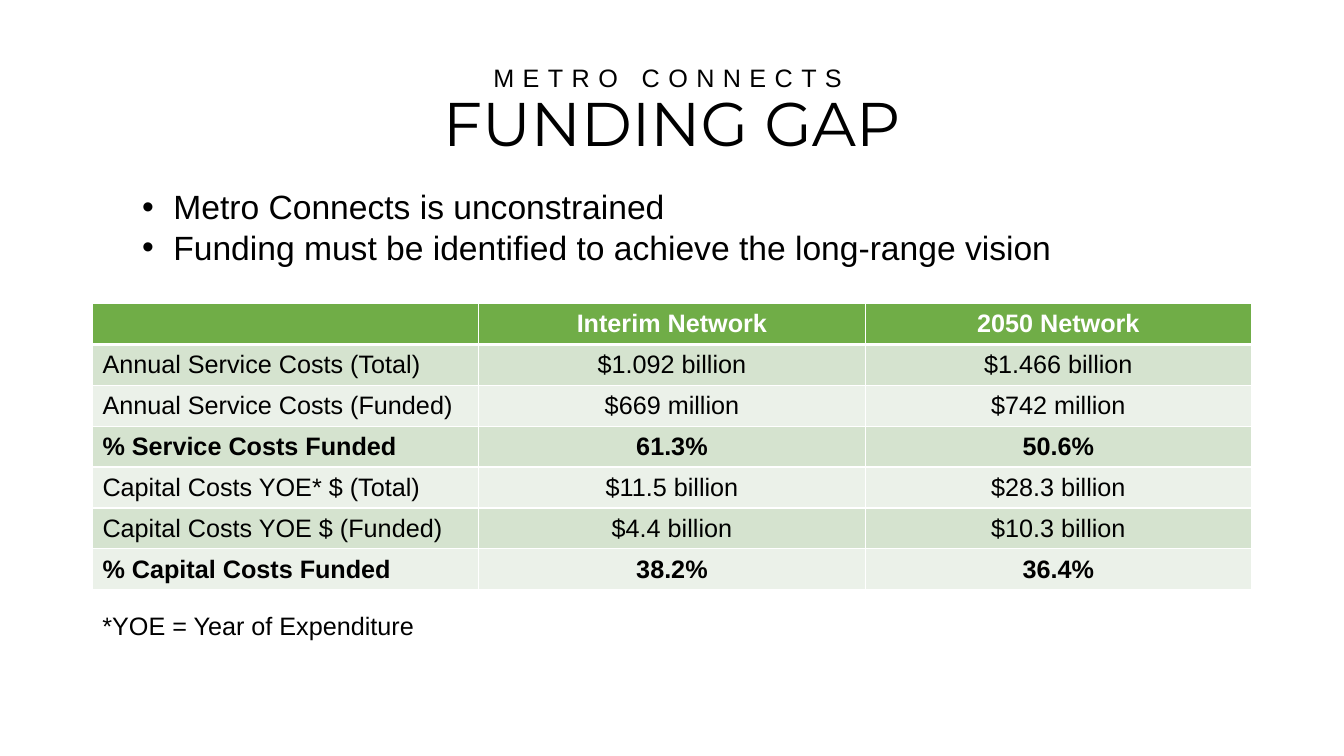
import pptx
import pptx.dml.color
import pptx.enum.text
import pptx.oxml
import pptx.oxml.ns
import pptx.util
from pptx.util import Cm

BLACK, WHITE, GREEN = "000000", "FFFFFF", "70AD47"
BANDS = ("D5E3CF", "EBF1E9")
CENTER = pptx.enum.text.PP_ALIGN.CENTER
MIDDLE = pptx.enum.text.MSO_ANCHOR.MIDDLE

COSTS = [
    ("", "Interim Network", "2050 Network"),
    ("Annual Service Costs (Total)", "$1.092 billion", "$1.466 billion"),
    ("Annual Service Costs (Funded)", "$669 million", "$742 million"),
    ("% Service Costs Funded", "61.3%", "50.6%"),
    ("Capital Costs YOE* $ (Total)", "$11.5 billion", "$28.3 billion"),
    ("Capital Costs YOE $ (Funded)", "$4.4 billion", "$10.3 billion"),
    ("% Capital Costs Funded", "38.2%", "36.4%"),
]


def color(value):
    return pptx.dml.color.RGBColor.from_string(value)


def style(run, size, ink=BLACK, face="Arial", bold=False):
    run.font.size = pptx.util.Pt(size)
    run.font.name = face
    run.font.bold = bold
    run.font.color.rgb = color(ink)


def add_text(slide, box, text, size):
    frame = slide.shapes.add_textbox(*box).text_frame
    frame.word_wrap = True
    frame.text = text
    for paragraph in frame.paragraphs:
        for run in paragraph.runs:
            style(run, size)
    return frame


def add_heading(slide, box):
    frame = add_text(slide, box, "METRO CONNECTS\vFUNDING GAP", 18)
    frame.vertical_anchor = MIDDLE
    heading = frame.paragraphs[0]
    heading.alignment = CENTER
    heading.line_spacing = 0.9
    program, topic = heading.runs
    program.font._element.set("spc", "600")
    style(topic, 44, face="Montserrat")


def add_key_points(slide, box):
    points = ("Metro Connects is unconstrained",
              "Funding must be identified to achieve the long-range vision")
    frame = add_text(slide, box, "\n".join(points), 24)
    indent = Cm(0.79)
    for point in frame.paragraphs:
        properties = point._p.get_or_add_pPr()
        properties.set("marL", str(indent))
        properties.set("indent", str(-indent))
        properties.append(pptx.oxml.parse_xml(
            f'<a:buFont {pptx.oxml.ns.nsdecls("a")} typeface="Arial"/>'))
        properties.append(pptx.oxml.parse_xml(
            f'<a:buChar {pptx.oxml.ns.nsdecls("a")} char="•"/>'))


def set_borders(cell, widths):
    properties = cell._tc.get_or_add_tcPr()
    for position, (side, points) in enumerate(widths.items()):
        properties.insert(position, pptx.oxml.parse_xml(
            f'<a:ln{side} {pptx.oxml.ns.nsdecls("a")} w="{pptx.util.Pt(points)}">'
            f'<a:solidFill><a:srgbClr val="{WHITE}"/></a:solidFill></a:ln{side}>'))


def add_cost_table(slide, box):
    left, top, width, height = box
    table = slide.shapes.add_table(len(COSTS), len(COSTS[0]), *box).table
    for column in table.columns:
        column.width = width // len(COSTS[0])
    for row_index, costs in enumerate(COSTS):
        table.rows[row_index].height = height // len(COSTS)
        header = row_index == 0
        fill = GREEN if header else BANDS[(row_index - 1) % 2]
        bold = header or costs[0].startswith("%")
        for column_index, text in enumerate(costs):
            cell = table.cell(row_index, column_index)
            cell.fill.solid()
            cell.fill.fore_color.rgb = color(fill)
            set_borders(cell, {"L": 1, "R": 1, "T": 3 if row_index == 1 else 1,
                               "B": 3 if header else 1})
            cell.vertical_anchor = MIDDLE
            cell.text = text
            paragraph = cell.text_frame.paragraphs[0]
            if column_index:
                paragraph.alignment = CENTER
            for run in paragraph.runs:
                style(run, 18, WHITE if header else BLACK, bold=bold)


def add_funding_slide(deck):
    slide = deck.slides.add_slide(deck.slide_layouts[6])
    left, width = Cm(2.33), Cm(29.21)
    add_heading(slide, (left, Cm(1.01), width, Cm(3.68)))
    add_cost_table(slide, (left, Cm(7.65), width, Cm(7.21)))
    add_text(slide, (left, Cm(15.25), Cm(27.2), Cm(1.03)),
             "*YOE = Year of Expenditure", 18)
    add_key_points(slide, (Cm(3.33), Cm(4.57), Cm(25.78), Cm(2.31)))


def main():
    deck = pptx.Presentation()
    deck.slide_width, deck.slide_height = Cm(33.87), Cm(19.05)
    add_funding_slide(deck)
    deck.save("out.pptx")


if __name__ == "__main__":
    main()
